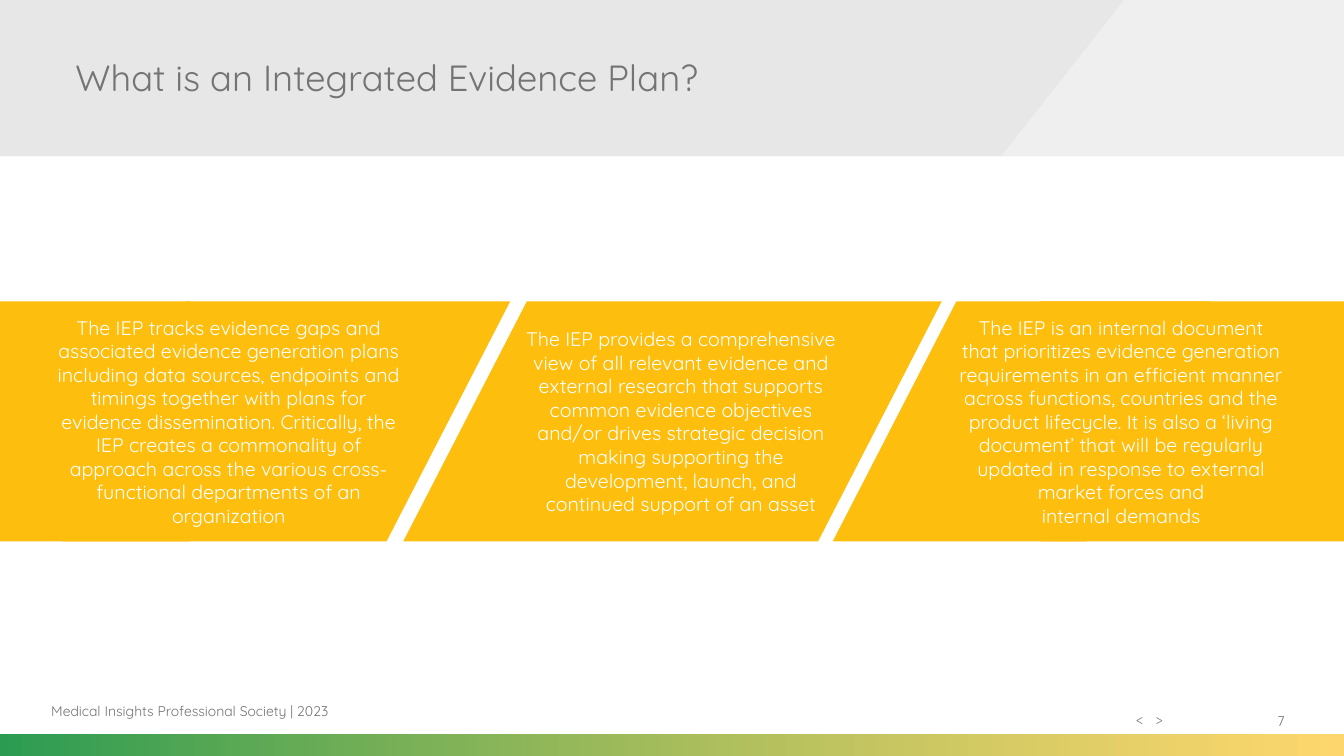
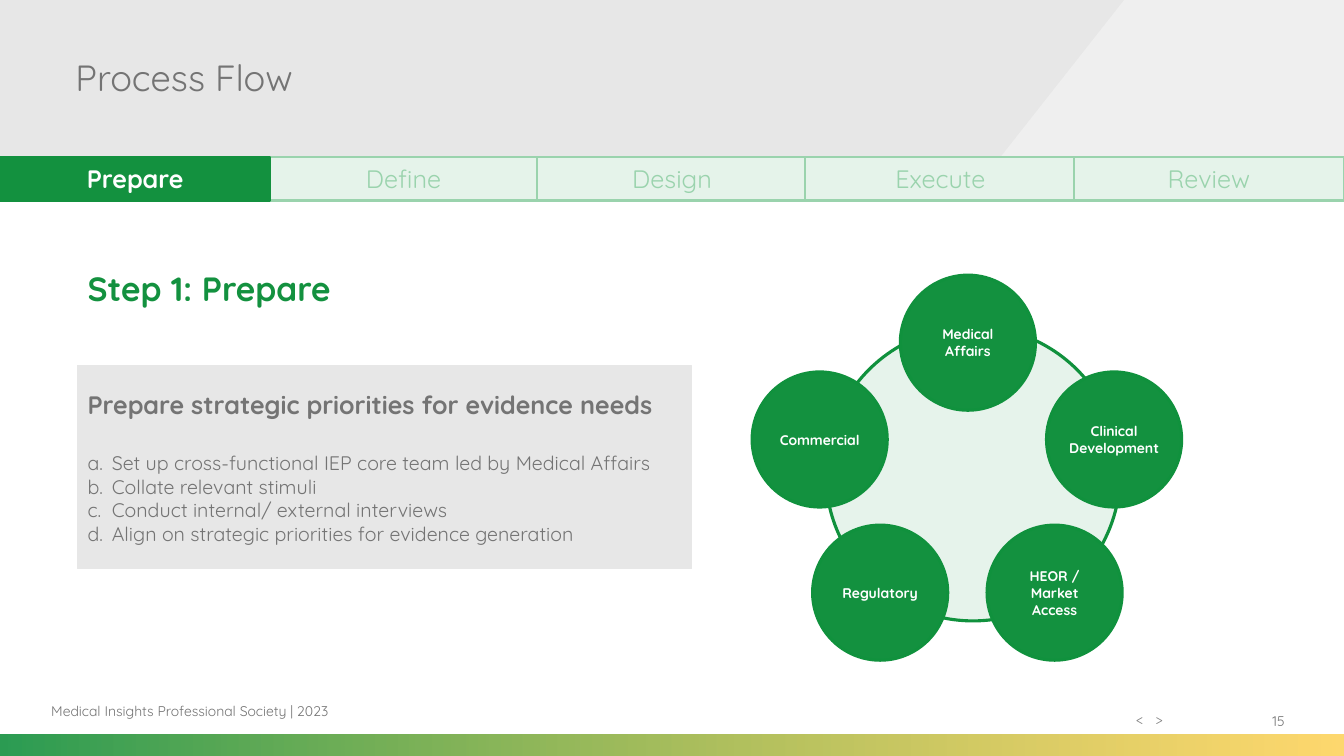
from lxml.etree import SubElement
from pptx import Presentation
from pptx.dml.color import RGBColor
from pptx.enum.shapes import MSO_SHAPE
from pptx.enum.text import MSO_ANCHOR, PP_ALIGN
from pptx.oxml.ns import qn
from pptx.util import Pt

PX = 9144  # EMU in one px, 100 px to the inch
WIDTH, HEIGHT = 1333, 750
FONT = "Quicksand"

WHITE = RGBColor(0xFF, 0xFF, 0xFF)
GREEN = RGBColor(0x13, 0x91, 0x3F)
RING_GREEN = RGBColor(0x10, 0x91, 0x3D)
SOFT_GREEN = RGBColor(0x9A, 0xD3, 0xAD)
PALE_GREEN = RGBColor(0xE5, 0xF3, 0xEA)
YELLOW = RGBColor(0xFE, 0xBE, 0x0D)
TEXT_GREY = RGBColor(0x74, 0x74, 0x74)
ARROW_GREY = RGBColor(0x80, 0x80, 0x80)
BOX_GREY = RGBColor(0xE7, 0xE7, 0xE7)
BAND_GREY = RGBColor(0xD9, 0xD9, 0xD9)
WEDGE_GREY = RGBColor(0xF2, 0xF2, 0xF2)

FOOTER = "Medical Insights Professional Society | 2023"

PANEL_TOP, PANEL_HEIGHT, PANEL_SLANT = 299, 238, 0.515
PANEL_PARTS = [  # preset, left, width
    (MSO_SHAPE.PARALLELOGRAM, 62, 444),
    (MSO_SHAPE.PARALLELOGRAM, 400, 534),
    (MSO_SHAPE.RECTANGLE, 0, 188),
    (MSO_SHAPE.PARALLELOGRAM, 826, 374),
    (MSO_SHAPE.RECTANGLE, 1032, 301),
]
PANEL_TEXTS = [  # left, width, text
    (44, 366, "The IEP tracks evidence gaps and associated evidence generation "
     "plans including data sources, endpoints and timings together with plans for "
     "evidence dissemination. Critically, the IEP creates a commonality of approach "
     "across the various cross-functional departments of an organization"),
    (510, 331, "The IEP provides a comprehensive view of all relevant evidence and "
     "external research that supports common evidence objectives and/or drives "
     "strategic decision making supporting the development, launch, and continued "
     "support of an asset"),
    (931, 362, "The IEP is an internal document\nthat prioritizes evidence generation "
     "requirements in an efficient manner across functions, countries and the product "
     "lifecycle. It is also a ‘living document’ that will be regularly updated in "
     "response to external market forces and\ninternal demands"),
]

STAGES = ["Prepare", "Define", "Design", "Execute", "Review"]
ACTIVE_STAGE = 0
STAGE_WIDTH, STAGE_OVERLAP = 268, 2

TASK_HEADING = "Prepare strategic priorities for evidence needs"
TASKS = [
    "Set up cross-functional IEP core team led by Medical Affairs",
    "Collate relevant stimuli",
    "Conduct internal/ external interviews",
    "Align on strategic priorities for evidence generation",
]

TEAM_DIAMETER = 134
TEAMS = [  # left, top, name
    (893, 273, "Medical Affairs"),
    (1038, 369, "Clinical Development"),
    (979, 521, "HEOR / Market Access"),
    (746, 369, "Commercial"),
    (806, 521, "Regulatory"),
]


def emu(*lengths):
    return [round(length * PX) for length in lengths]


def set_alpha(shape, *percents):
    """Make the fill colours of a shape see-through, in order."""
    colors = list(shape._element.spPr.iter(qn("a:srgbClr")))
    for color, percent in zip(colors, percents):
        SubElement(color, qn("a:alpha"), val=str(percent * 1000))


def paint(shape, fill, line=None, line_width=1):
    shape.shadow.inherit = False
    shape.fill.solid()
    shape.fill.fore_color.rgb = fill
    if line is None:
        shape.line.fill.background()
    else:
        shape.line.color.rgb = line
        shape.line.width = Pt(line_width)


def add_preset(slide, preset, box, fill, line=None, line_width=1):
    shape = slide.shapes.add_shape(preset, *emu(*box))
    paint(shape, fill, line, line_width)
    return shape


def write(paragraph, text, size, color, bold=False, align=PP_ALIGN.LEFT):
    paragraph.alignment = align
    for index, line in enumerate(text.split("\n")):
        if index:
            paragraph.add_line_break()
        run = paragraph.add_run()
        run.text = line
        run.font.name = FONT
        run.font.size = Pt(size)
        run.font.bold = bold
        run.font.color.rgb = color


def label(shape, text, size, color, bold=False, align=PP_ALIGN.CENTER,
          anchor=MSO_ANCHOR.MIDDLE):
    frame = shape.text_frame
    frame.word_wrap = True
    frame.vertical_anchor = anchor
    write(frame.paragraphs[0], text, size, color, bold, align)
    return frame


def add_text(slide, box, text, size, color, bold=False, align=PP_ALIGN.LEFT,
             anchor=MSO_ANCHOR.MIDDLE):
    return label(slide.shapes.add_textbox(*emu(*box)), text, size, color, bold,
                 align, anchor)


def add_base_slide(presentation, title, number):
    """Add a slide with header band, title, footer and gradient strip."""
    slide = presentation.slides.add_slide(presentation.slide_layouts[6])
    band = add_preset(slide, MSO_SHAPE.RECTANGLE, (0, 0, WIDTH, 155), BAND_GREY)
    set_alpha(band, 62)

    builder = slide.shapes.build_freeform(1115, 0, scale=PX)
    builder.add_line_segments([(WIDTH, 0), (WIDTH, 155), (993, 155)])
    wedge = builder.convert_to_shape()
    paint(wedge, WEDGE_GREY)
    set_alpha(wedge, 79)

    strip = add_preset(slide, MSO_SHAPE.RECTANGLE, (0, 729, WIDTH, 21), GREEN)
    strip.fill.gradient()
    strip.fill.gradient_angle = 0
    for stop, color, position in zip(strip.fill.gradient_stops, (GREEN, YELLOW), (0, 1)):
        stop.color.rgb = color
        stop.position = position
    set_alpha(strip, 90, 60)

    add_text(slide, (1193, 695, 91, 40), str(number), 10, TEXT_GREY,
             align=PP_ALIGN.RIGHT)
    arrows = add_text(slide, (1117, 700, 70, 27), "", 10, ARROW_GREY,
                      anchor=MSO_ANCHOR.TOP).paragraphs[0]
    tabs = SubElement(arrows._p.get_or_add_pPr(), qn("a:tabLst"))
    SubElement(tabs, qn("a:tab"), pos=str(19 * PX), algn="l")
    arrows.runs[0].text = "<\t>"
    add_text(slide, (41, 685, 422, 40), FOOTER, 10, TEXT_GREY)
    add_text(slide, (65, 0, 1000, 153), title, 26, TEXT_GREY)
    return slide


def add_panels(slide):
    for preset, left, width in PANEL_PARTS:
        part = add_preset(slide, preset, (left, PANEL_TOP, width, PANEL_HEIGHT), YELLOW)
        if preset == MSO_SHAPE.PARALLELOGRAM:
            part.adjustments[0] = PANEL_SLANT
    for left, width, text in PANEL_TEXTS:
        add_text(slide, (left, PANEL_TOP, width, PANEL_HEIGHT), text, 14, WHITE,
                 align=PP_ALIGN.CENTER)


def add_stages(slide):
    step = (WIDTH - STAGE_WIDTH) / (len(STAGES) - 1)
    # The active stage goes last so that it covers its neighbour's edge.
    for index in sorted(range(len(STAGES)), key=lambda i: i == ACTIVE_STAGE):
        active = index == ACTIVE_STAGE
        fill, line, color = (GREEN, GREEN, WHITE) if active else (
            PALE_GREEN, SOFT_GREEN, SOFT_GREEN)
        tab = add_preset(slide, MSO_SHAPE.RECTANGLE,
                         (index * step, 156, STAGE_WIDTH, 43), fill, line, 1.5)
        label(tab, STAGES[index], 18, color, active)


def add_tasks(slide):
    box = add_preset(slide, MSO_SHAPE.RECTANGLE, (77, 363, 609, 201),
                     BOX_GREY, BOX_GREY, 0.75)
    frame = label(box, TASK_HEADING, 18, TEXT_GREY, True, PP_ALIGN.LEFT)
    frame.paragraphs[0].space_after = Pt(22.5)
    for task in TASKS:
        paragraph = frame.add_paragraph()
        properties = paragraph._p.get_or_add_pPr()
        properties.set("marL", str(24 * PX))
        properties.set("indent", str(-24 * PX))
        SubElement(properties, qn("a:buFont"), typeface=FONT)
        SubElement(properties, qn("a:buAutoNum"), type="alphaLcPeriod")
        write(paragraph, task, 14, TEXT_GREY)


def add_team_ring(slide):
    ring = add_preset(slide, MSO_SHAPE.OVAL, (819, 324, 292, 292),
                      GREEN, RING_GREEN, 2.25)
    set_alpha(ring, 10)
    for left, top, name in TEAMS:
        circle = add_preset(slide, MSO_SHAPE.OVAL,
                            (left, top, TEAM_DIAMETER, TEAM_DIAMETER),
                            GREEN, RING_GREEN, 2.25)
        frame = label(circle, name, 10, WHITE, True)
        frame.margin_left = frame.margin_right = 0
        frame.margin_top = frame.margin_bottom = 0


def main():
    presentation = Presentation()
    presentation.slide_width, presentation.slide_height = emu(WIDTH, HEIGHT)

    plan_slide = add_base_slide(presentation, "What is an Integrated Evidence Plan?", 7)
    add_panels(plan_slide)

    process_slide = add_base_slide(presentation, "Process Flow", 15)
    heading = add_text(process_slide, (77, 261, 270, 50), "Step 1: Prepare", 24, GREEN,
                       True, anchor=MSO_ANCHOR.TOP)
    heading.word_wrap = False
    add_tasks(process_slide)
    add_stages(process_slide)
    add_team_ring(process_slide)

    presentation.save("out.pptx")


if __name__ == "__main__":
    main()
